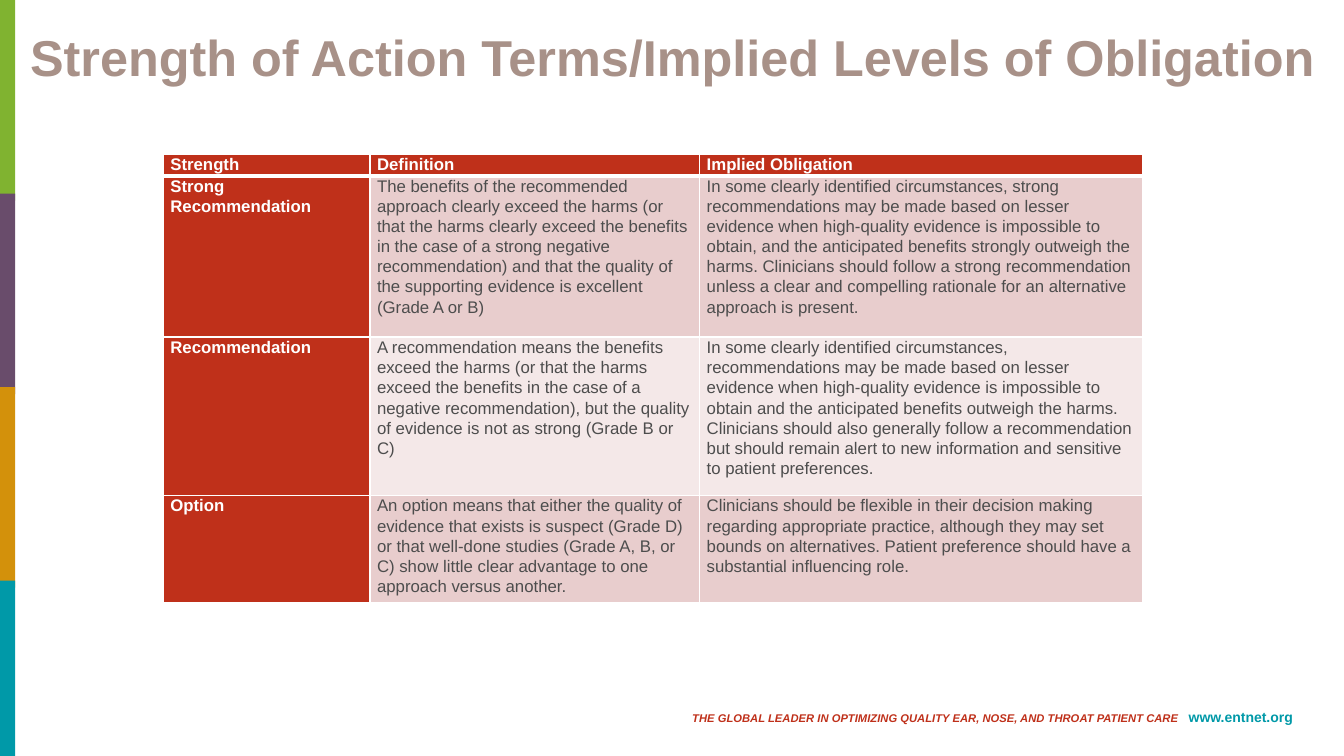
from dataclasses import dataclass

from lxml import etree
from pptx import Presentation
from pptx.dml.color import RGBColor
from pptx.enum.shapes import MSO_SHAPE
from pptx.enum.text import MSO_ANCHOR, PP_ALIGN
from pptx.oxml.ns import qn
from pptx.util import Inches, Pt

RECT = MSO_SHAPE.RECTANGLE
TOP, MIDDLE = MSO_ANCHOR.TOP, MSO_ANCHOR.MIDDLE
LEFT, RIGHT = PP_ALIGN.LEFT, PP_ALIGN.RIGHT


@dataclass(frozen=True)
class Theme:
    font: str = "Arial"
    red: str = "BF301A"
    teal: str = "0099A8"
    title: str = "A89188"
    body: str = "4D4D4D"
    white: str = "FFFFFF"
    bands: tuple = ("E8CDCD", "F4E8E8")
    stripes: tuple = ("80B330", "694C6B", "D3910B", "0099A8")
    title_size: int = 36
    table_size: int = 12
    tagline_size: int = 8
    url_size: int = 10


THEME = Theme()

COLUMN_WIDTHS = (2.05, 3.27, 4.39)
ROW_HEIGHTS = (0.21, 1.6, 1.57, 1.01)
ROWS = (
    ("Strength", "Definition", "Implied Obligation"),
    (
        "Strong Recommendation",
        "The benefits of the recommended approach clearly exceed the harms (or that the harms "
        "clearly exceed the benefits in the case of a strong negative recommendation) and that "
        "the quality of the supporting evidence is excellent (Grade A or B)",
        "In some clearly identified circumstances, strong recommendations may be made based on "
        "lesser evidence when high-quality evidence is impossible to obtain, and the anticipated "
        "benefits strongly outweigh the harms. Clinicians should follow a strong recommendation "
        "unless a clear and compelling rationale for an alternative approach is present.",
    ),
    (
        "Recommendation",
        "A recommendation means the benefits exceed the harms (or that the harms exceed the "
        "benefits in the case of a negative recommendation), but the quality of evidence is not "
        "as strong (Grade B or C)",
        "In some clearly identified circumstances, recommendations may be made based on lesser "
        "evidence when high-quality evidence is impossible to obtain and the anticipated benefits "
        "outweigh the harms. Clinicians should also generally follow a recommendation but should "
        "remain alert to new information and sensitive to patient preferences.",
    ),
    (
        "Option",
        "An option means that either the quality of evidence that exists is suspect (Grade D) or "
        "that well-done studies (Grade A, B, or C) show little clear advantage to one approach "
        "versus another.",
        "Clinicians should be flexible in their decision making regarding appropriate practice, "
        "although they may set bounds on alternatives. Patient preference should have a "
        "substantial influencing role.",
    ),
)


def style_run(r, size, color, bold=True, italic=False):
    r.font.name = THEME.font
    r.font.size = Pt(size)
    r.font.bold = bold
    r.font.italic = italic
    r.font.color.rgb = RGBColor.from_string(color)


def add_text(s, box, align, anchor):
    tf = s.shapes.add_textbox(*map(Inches, box)).text_frame
    tf.word_wrap = True
    tf.vertical_anchor = anchor
    p = tf.paragraphs[0]
    p.alignment = align
    return p


def add_stripes(s):
    step = 1.92
    for i, color in enumerate(THEME.stripes):
        top = i * step
        height = min(1.99, 7.5 - top)
        sp = s.shapes.add_shape(RECT, 0, Inches(top), Inches(0.15), Inches(height))
        sp.shadow.inherit = False
        sp.fill.solid()
        sp.fill.fore_color.rgb = RGBColor.from_string(color)
        sp.line.fill.background()


def add_title(s):
    p = add_text(s, (0.2, -0.29, 13.06, 1.78), LEFT, MIDDLE)
    p.text = "Strength of Action Terms/Implied Levels of Obligation"
    p.line_spacing = 0.9
    style_run(p.runs[0], THEME.title_size, THEME.title)


def add_footer(s):
    p = add_text(s, (5.23, 6.98, 7.69, 0.27), RIGHT, TOP)
    tagline = "THE GLOBAL LEADER IN OPTIMIZING QUALITY EAR, NOSE, AND THROAT PATIENT CARE"
    for text, size, color, italic in (
        (tagline, THEME.tagline_size, THEME.red, True),
        (" ", THEME.tagline_size, THEME.red, True),
        ("www.entnet.org", THEME.url_size, THEME.teal, False),
    ):
        r = p.add_run()
        r.text = text
        style_run(r, size, color, italic=italic)
    gap = p.runs[1].font
    gap._element.set("spc", "450")


def set_borders(cell, widths):
    tc_pr = cell._tc.get_or_add_tcPr()
    for side, width in zip("LRTB", widths):
        ln = etree.SubElement(tc_pr, qn(f"a:ln{side}"), w=str(Pt(width)))
        fill = etree.SubElement(ln, qn("a:solidFill"))
        etree.SubElement(fill, qn("a:srgbClr"), val=THEME.white)


def fill_cell(cell, text, row, col):
    heading = row == 0 or col == 0
    set_borders(cell, (1, 1, 3 if row == 1 else 1, 3 if row == 0 else 1))
    cell.fill.solid()
    color = THEME.red if heading else THEME.bands[(row - 1) % 2]
    cell.fill.fore_color.rgb = RGBColor.from_string(color)
    cell.margin_left = cell.margin_right = Inches(0.07)
    cell.margin_top = cell.margin_bottom = 0
    cell.text_frame.text = text
    p = cell.text_frame.paragraphs[0]
    p.line_spacing = 1.07
    style_run(p.runs[0], THEME.table_size, THEME.white if heading else THEME.body, heading)


def add_strength_table(s):
    box = (1.62, 1.53, sum(COLUMN_WIDTHS), sum(ROW_HEIGHTS))
    table = s.shapes.add_table(len(ROWS), len(COLUMN_WIDTHS), *map(Inches, box)).table
    table.first_col = True
    for column, width in zip(table.columns, COLUMN_WIDTHS):
        column.width = Inches(width)
    for row, height in zip(table.rows, ROW_HEIGHTS):
        row.height = Inches(height)
    for i, texts in enumerate(ROWS):
        for j, text in enumerate(texts):
            fill_cell(table.cell(i, j), text, i, j)


def main():
    prs = Presentation()
    prs.slide_width, prs.slide_height = Inches(13.33), Inches(7.5)
    s = prs.slides.add_slide(prs.slide_layouts[6])
    add_footer(s)
    add_stripes(s)
    add_title(s)
    add_strength_table(s)
    prs.save("out.pptx")


if __name__ == "__main__":
    main()
